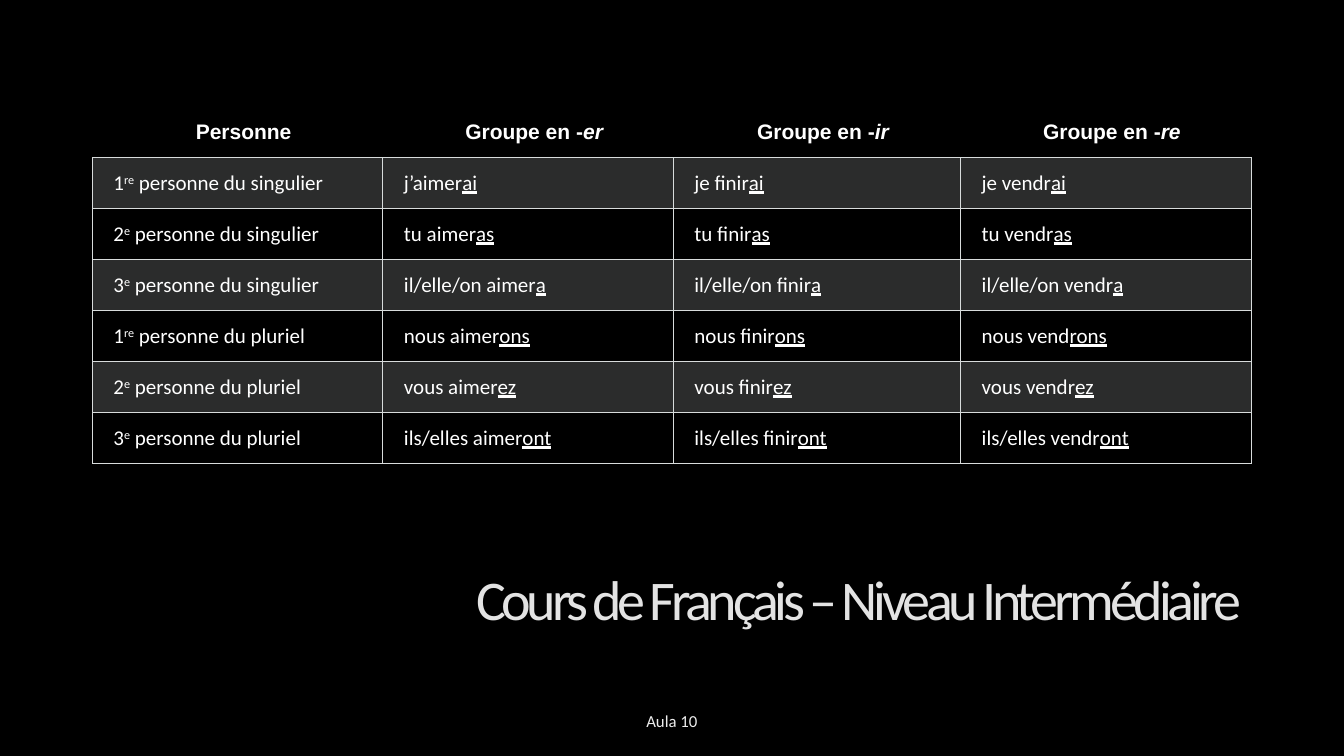
from lxml import etree
from pptx import Presentation
from pptx.dml.color import RGBColor
from pptx.enum.text import MSO_ANCHOR, MSO_AUTO_SIZE, PP_ALIGN
from pptx.oxml.ns import qn
from pptx.util import Cm, Pt

LEFT, CENTER, RIGHT = PP_ALIGN.LEFT, PP_ALIGN.CENTER, PP_ALIGN.RIGHT
TOP, MIDDLE = MSO_ANCHOR.TOP, MSO_ANCHOR.MIDDLE
NO_AUTOFIT = MSO_AUTO_SIZE.NONE

# The second part of each text, between bars, is the emphasized one.
HEADERS = ["Personne", "Groupe en -|er", "Groupe en -|ir", "Groupe en -|re"]
CONJUGATION = [
    ["1|re| personne du singulier", "j’aimer|ai", "je finir|ai", "je vendr|ai"],
    ["2|e| personne du singulier", "tu aimer|as", "tu finir|as", "tu vendr|as"],
    ["3|e| personne du singulier", "il/elle/on aimer|a", "il/elle/on finir|a", "il/elle/on vendr|a"],
    ["1|re| personne du pluriel", "nous aimer|ons", "nous finir|ons", "nous vend|rons"],
    ["2|e| personne du pluriel", "vous aimer|ez", "vous finir|ez", "vous vendr|ez"],
    ["3|e| personne du pluriel", "ils/elles aimer|ont", "ils/elles finir|ont", "ils/elles vendr|ont"],
]
COLUMN_WIDTHS = [7.32, 7.32, 7.24, 7.32]
TABLE_HEIGHT = 9


def color(value):
    return RGBColor.from_string(value)


def italicize(span):
    span.font.italic = True


def underline(span):
    span.font.underline = True


def raise_up(span):
    span.font._element.set("baseline", "30000")


class Lesson:
    background = "000000"
    text = "FFFFFF"
    title_text = "E3E3E3"
    footer_text = "EDEDED"
    grid = "D8DCDC"
    band = "D8DEDC"
    body_font = "Calibri"
    header_font = "Arial"

    def __init__(self, deck):
        self.page = deck.slides.add_slide(deck.slide_layouts[5])
        fill = self.page.background.fill
        fill.solid()
        fill.fore_color.rgb = color(self.background)

    def format_span(self, span, size, shade, font=body_font, bold=False):
        span.font.name = font
        span.font.size = Pt(size)
        span.font.bold = bold
        span.font.color.rgb = color(shade)

    def fill_box(self, box, text, size, shade, align, anchor):
        frame = box.text_frame
        frame.text = text
        frame.word_wrap = True
        frame.auto_size = NO_AUTOFIT
        frame.vertical_anchor = anchor
        para = frame.paragraphs[0]
        para.alignment = align
        self.format_span(para.runs[0], size, shade)
        return para

    def title(self, text, left, top, width, height):
        box = self.page.shapes.title
        box.left, box.top, box.width, box.height = Cm(left), Cm(top), Cm(width), Cm(height)
        para = self.fill_box(box, text, 40, self.title_text, RIGHT, TOP)
        para.line_spacing = 0.9
        para.runs[0].font._element.set("spc", "-300")

    def footer(self, text, left, top, width, height):
        box = self.page.shapes.add_textbox(Cm(left), Cm(top), Cm(width), Cm(height))
        para = self.fill_box(box, text, 12, self.footer_text, CENTER, MIDDLE)
        para.space_after = Pt(6)

    def table(self, left, top):
        rows = [HEADERS] + CONJUGATION
        table = self.page.shapes.add_table(
            len(rows), len(HEADERS), Cm(left), Cm(top),
            Cm(sum(COLUMN_WIDTHS)), Cm(TABLE_HEIGHT)).table
        table.first_row = table.horz_banding = False
        for column, width in zip(table.columns, COLUMN_WIDTHS):
            column.width = Cm(width)
        for row_index, texts in enumerate(rows):
            for column_index, text in enumerate(texts):
                self.cell(table.cell(row_index, column_index), text, row_index, column_index)

    def cell(self, cell, text, row_index, column_index):
        header = row_index == 0
        cell.margin_left, cell.margin_right = Cm(0.53), Cm(0.23)
        cell.margin_top = cell.margin_bottom = Cm(0.25)
        cell.vertical_anchor = MIDDLE
        self.borders(cell, "B" if header else "LRTB")
        if row_index % 2:
            self.shade_band(cell)
        else:
            cell.fill.background()

        if header:
            emphasize = italicize
        else:
            emphasize = underline if column_index else raise_up
        para = cell.text_frame.paragraphs[0]
        para.alignment = CENTER if header else LEFT
        for part_index, part in enumerate(text.split("|")):
            span = para.add_run()
            span.text = part
            font = self.header_font if header else self.body_font
            self.format_span(span, 15, self.text, font, header)
            if part_index == 1:
                emphasize(span)

    def borders(self, cell, visible_sides):
        properties = cell._tc.get_or_add_tcPr()
        for side in "LRTB":
            line = etree.SubElement(properties, qn(f"a:ln{side}"), w=str(Pt(0.75)))
            if side in visible_sides:
                fill = etree.SubElement(line, qn("a:solidFill"))
                etree.SubElement(fill, qn("a:srgbClr"), val=self.grid)
            else:
                etree.SubElement(line, qn("a:noFill"))

    def shade_band(self, cell):
        cell.fill.solid()
        cell.fill.fore_color.rgb = color(self.band)
        shade = cell._tc.tcPr.find(qn("a:solidFill")).find(qn("a:srgbClr"))
        etree.SubElement(shade, qn("a:alpha"), val="20000")


def main():
    deck = Presentation()
    deck.slide_width, deck.slide_height = Cm(33.87), Cm(19.05)
    lesson = Lesson(deck)
    lesson.title("Cours de Français – Niveau Intermédiaire", 2.33, 14.3, 29.21, 2.67)
    lesson.footer("Aula 10", 11.22, 17.66, 11.43, 1.01)
    lesson.table(2.33, 2.69)
    deck.save("out.pptx")


if __name__ == "__main__":
    main()
